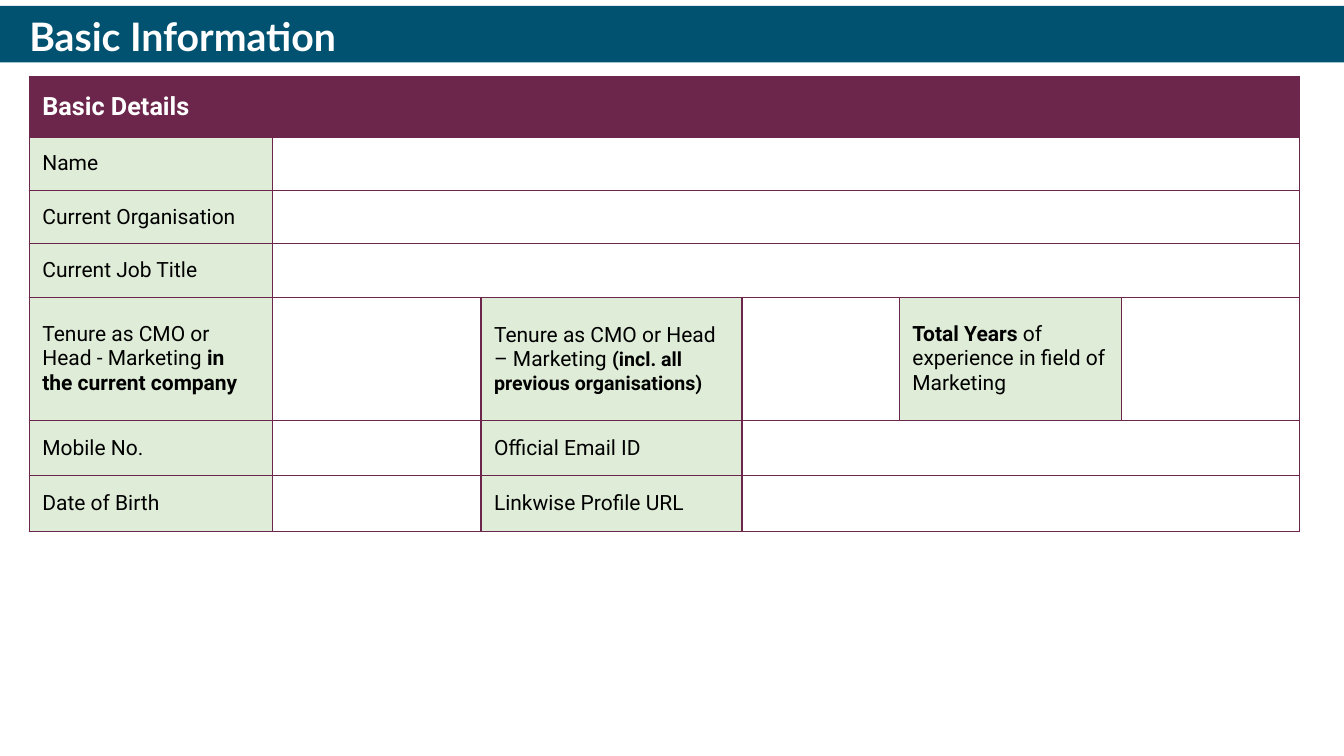
from lxml import etree
from pptx import Presentation
from pptx.dml.color import RGBColor
from pptx.enum.shapes import MSO_SHAPE
from pptx.enum.text import MSO_ANCHOR, MSO_AUTO_SIZE, PP_ALIGN
from pptx.oxml.ns import qn
from pptx.util import Inches, Pt

RECTANGLE = MSO_SHAPE.RECTANGLE
MIDDLE = MSO_ANCHOR.MIDDLE
NO_AUTOFIT = MSO_AUTO_SIZE.NONE
LEFT = PP_ALIGN.LEFT

# Content: each label is a list of (text, size, bold) runs
TITLE = "Basic Information"
HEADING = "Basic Details"


def plain(label):
    return [(label, 15, False)]


# Each row maps a column to its label and ends with the start of its last, merged field
FORM_ROWS = [
    ({0: plain("Name")}, 1),
    ({0: plain("Current Organisation")}, 1),
    ({0: plain("Current Job Title")}, 1),
    ({0: [("Tenure as CMO or Head - Marketing ", 15, False),
          ("in the current company", 15, True)],
      2: [("Tenure as CMO or Head – Marketing ", 15, False),
          ("(incl. all previous organisations)", 14, True)],
      4: [("Total Years ", 15, True),
          ("of experience in field of Marketing", 15, False)]}, 5),
    ({0: plain("Mobile No."), 2: plain("Official Email ID")}, 3),
    ({0: plain("Date of Birth"), 2: plain("Linkwise Profile URL")}, 3),
]

# Layout in inches
SLIDE_WIDTH, SLIDE_HEIGHT = 13.33, 7.5
MARGIN = 0.29
BAND_TOP, BAND_HEIGHT = 0.06, 0.56
TABLE_TOP = 0.76
COLUMN_WIDTHS = [2.41, 2.07, 2.59, 1.56, 2.2, 1.77]
ROW_HEIGHTS = [0.6, 0.53, 0.53, 0.53, 1.22, 0.55, 0.55]

TEAL, PLUM, MINT, WHITE, BLACK = "005270", "6C264C", "DFEDD8", "FFFFFF", "000000"


def paint(fill, color):
    fill.solid()
    fill.fore_color.rgb = RGBColor.from_string(color)


def write(frame, runs, font="Roboto", color=BLACK, line_spacing=None):
    paragraph = frame.paragraphs[0]
    paragraph.alignment = LEFT
    if line_spacing:
        paragraph.line_spacing = line_spacing
    for text, size, bold in runs:
        run = paragraph.add_run()
        run.text = text
        run.font.name = font
        run.font.size = Pt(size)
        run.font.bold = bold
        run.font.color.rgb = RGBColor.from_string(color)


def add_borders(cell, color, width):
    properties = cell._tc.get_or_add_tcPr()
    for position, side in enumerate(("a:lnL", "a:lnR", "a:lnT", "a:lnB")):
        line = etree.Element(qn(side), w=str(Pt(width)))
        fill = etree.SubElement(line, qn("a:solidFill"))
        etree.SubElement(fill, qn("a:srgbClr"), val=color)
        properties.insert(position, line)


def fill_label(cell, runs, background=MINT, color=BLACK):
    paint(cell.fill, background)
    cell.margin_left = cell.margin_right = Inches(0.13)
    cell.margin_top = cell.margin_bottom = Inches(0.07)
    cell.vertical_anchor = MIDDLE
    write(cell.text_frame, runs, color=color)


presentation = Presentation()
presentation.slide_width = Inches(SLIDE_WIDTH)
presentation.slide_height = Inches(SLIDE_HEIGHT)
slide = presentation.slides.add_slide(presentation.slide_layouts[5])

# Title band, sent behind the title
band = slide.shapes.add_shape(RECTANGLE, 0, Inches(BAND_TOP),
                              Inches(SLIDE_WIDTH), Inches(BAND_HEIGHT))
band.shadow.inherit = False
paint(band.fill, TEAL)
band.line.fill.background()
slide.shapes._spTree.insert(2, band._element)

# Title
title = slide.shapes.title
title.left, title.top = Inches(MARGIN), Inches(0.13)
title.width, title.height = Inches(12.81), Inches(BAND_HEIGHT)
title_frame = title.text_frame
title_frame.auto_size = NO_AUTOFIT
title_frame.word_wrap = True
title_frame.vertical_anchor = MIDDLE
title_frame.margin_left = title_frame.margin_right = 0
title_frame.margin_top = title_frame.margin_bottom = 0
write(title_frame, [(TITLE, 28, True)], font="Lato", color=WHITE, line_spacing=0.7)

# Form grid
form = slide.shapes.add_table(
    len(ROW_HEIGHTS), len(COLUMN_WIDTHS), Inches(MARGIN), Inches(TABLE_TOP),
    Inches(sum(COLUMN_WIDTHS)), Inches(sum(ROW_HEIGHTS))).table
form.first_row = form.horz_banding = False
for column, width in zip(form.columns, COLUMN_WIDTHS):
    column.width = Inches(width)
for row, height in zip(form.rows, ROW_HEIGHTS):
    row.height = Inches(height)
for cell in form.iter_cells():
    cell.fill.background()
    add_borders(cell, PLUM, 1)

# Heading and labelled fields
last_column = len(COLUMN_WIDTHS) - 1
form.cell(0, 0).merge(form.cell(0, last_column))
fill_label(form.cell(0, 0), [(HEADING, 18, True)], background=PLUM, color=WHITE)
for row_index, (labels, field_start) in enumerate(FORM_ROWS, start=1):
    for column_index, runs in labels.items():
        fill_label(form.cell(row_index, column_index), runs)
    if field_start < last_column:
        form.cell(row_index, field_start).merge(form.cell(row_index, last_column))

presentation.save("out.pptx")
